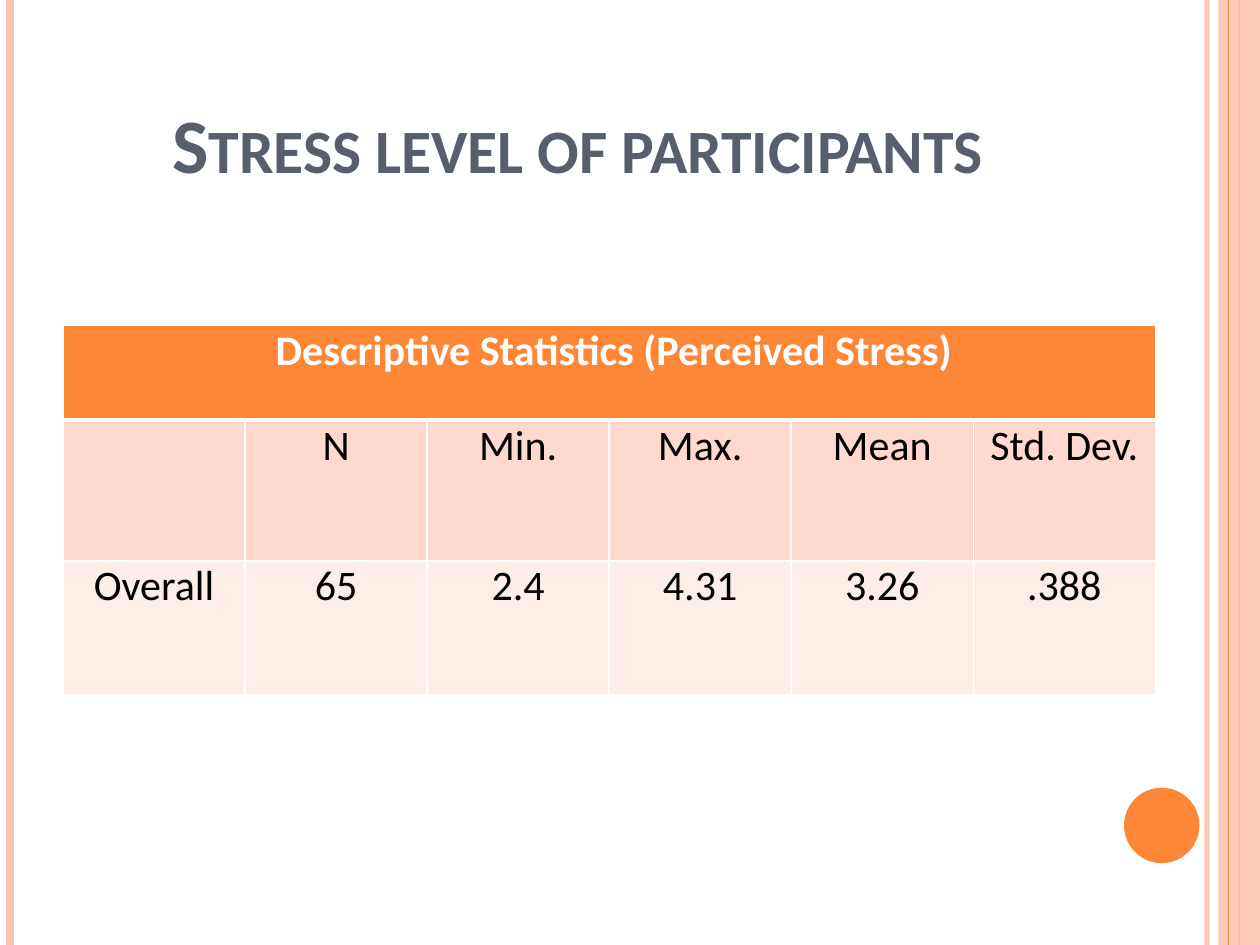
from lxml import etree
from pptx import Presentation
from pptx.dml.color import RGBColor
from pptx.enum.shapes import MSO_CONNECTOR, MSO_SHAPE
from pptx.enum.text import MSO_ANCHOR, PP_ALIGN
from pptx.oxml.ns import qn
from pptx.util import Cm, Pt

STRAIGHT = MSO_CONNECTOR.STRAIGHT
RECT = MSO_SHAPE.RECTANGLE
OVAL = MSO_SHAPE.OVAL
BOTTOM = MSO_ANCHOR.BOTTOM
CENTER = PP_ALIGN.CENTER

ORANGE = RGBColor(0xFE, 0x86, 0x37)
PEACH = RGBColor(0xFE, 0xC3, 0xAE)
ROSE = RGBColor(0xFF, 0xD9, 0xCE)
BLUSH = RGBColor(0xFF, 0xED, 0xE8)
SLATE = RGBColor(0x57, 0x5F, 0x6D)
WHITE = RGBColor(0xFF, 0xFF, 0xFF)
BLACK = RGBColor(0, 0, 0)

FONT = "Calibri"
HEIGHT = 19.05
COL = 3.67
HEADING = " Descriptive Statistics (Perceived Stress)"
ROWS = [
    (1.91, ORANGE, WHITE, [HEADING, "", "", "", "", ""]),
    (2.84, ROSE, BLACK, ["", "N", "Min.", "Max.", "Mean", "Std. Dev."]),
    (2.69, BLUSH, BLACK, ["Overall", "65", "2.4", "4.31", "3.26", ".388"]),
]


def fade(fill, alpha):
    """Set the opacity of a solid fill, in percent."""
    color = fill._xPr.find(".//" + qn("a:srgbClr"))
    etree.SubElement(color, qn("a:alpha"), val=str(alpha * 1000))


def add_rule(slide, left, width, color, alpha=100):
    """Draw a vertical line over the full slide height."""
    line = slide.shapes.add_connector(STRAIGHT, Cm(left), 0, Cm(left), Cm(HEIGHT))
    line.line.width = Pt(width)
    line.line.color.rgb = color
    if alpha < 100:
        fade(line.line.fill, alpha)
    etree.SubElement(line._element.spPr, qn("a:effectLst"))


def add_block(slide, kind, left, top, width, height, color, alpha=100):
    """Draw a filled shape with no outline."""
    block = slide.shapes.add_shape(kind, Cm(left), Cm(top), Cm(width), Cm(height))
    block.shadow.inherit = False
    block.fill.solid()
    block.fill.fore_color.rgb = color
    if alpha < 100:
        fade(block.fill, alpha)
    block.line.fill.background()


def add_run(frame, text, size, color, bold):
    """Add one centred run to the first paragraph."""
    para = frame.paragraphs[0]
    para.alignment = CENTER
    run = para.add_run()
    run.text = text
    run.font.name = FONT
    run.font.size = Pt(size)
    run.font.bold = bold
    run.font.color.rgb = color
    return run


def add_title(slide, text):
    """Add the title in small capitals."""
    box = slide.shapes.add_textbox(Cm(1.27), Cm(0.76), Cm(20.75), Cm(3.18))
    frame = box.text_frame
    frame.word_wrap = True
    frame.vertical_anchor = BOTTOM
    run = add_run(frame, text, 44, SLATE, True)
    run.font._element.set("cap", "small")


def add_edge(cell, side, width):
    """Add a white border to one side of a cell."""
    props = cell._tc.get_or_add_tcPr()
    edge = etree.SubElement(props, qn("a:ln" + side), w=str(Pt(width)))
    fill = etree.SubElement(edge, qn("a:solidFill"))
    etree.SubElement(fill, qn("a:srgbClr"), val=str(WHITE))


def style_cell(cell, row, text, fill, color):
    """Set the margins, borders, fill and text of a cell."""
    cell.margin_left = cell.margin_right = Cm(0.18)
    cell.margin_top = cell.margin_bottom = 0
    for side in "LRTB":
        thick = (row, side) in ((0, "B"), (1, "T"))
        add_edge(cell, side, 3 if thick else 1)
    cell.fill.solid()
    cell.fill.fore_color.rgb = fill
    if text:
        add_run(cell.text_frame, text, 24, color, row == 0)


def add_stats(slide):
    """Add the table of statistics."""
    count = len(ROWS[0][3])
    total = sum(row[0] for row in ROWS)
    frame = slide.shapes.add_table(
        len(ROWS), count, Cm(1.27), Cm(6.56), Cm(COL * count), Cm(total))
    table = frame.table
    for col in table.columns:
        col.width = Cm(COL)
    for i, (height, fill, color, texts) in enumerate(ROWS):
        table.rows[i].height = Cm(height)
        for j, text in enumerate(texts):
            style_cell(table.cell(i, j), i, text, fill, color)
    table.cell(0, 0).merge(table.cell(0, count - 1))


def main():
    """Build and save the slide."""
    deck = Presentation()
    deck.slide_width, deck.slide_height = Cm(25.4), Cm(HEIGHT)
    slide = deck.slides.add_slide(deck.slide_layouts[6])
    add_rule(slide, 24.33, 3, PEACH, 93)
    add_rule(slide, 0.21, 4.5, PEACH)
    add_rule(slide, 24.98, 1.5, ORANGE)
    add_block(slide, RECT, 24.56, 0, 0.84, HEIGHT, PEACH, 87)
    add_rule(slide, 24.77, 0.75, ORANGE)
    add_block(slide, OVAL, 22.66, 15.88, 1.52, 1.52, ORANGE)
    add_title(slide, "Stress level of participants")
    add_stats(slide)
    deck.save("out.pptx")


if __name__ == "__main__":
    main()
